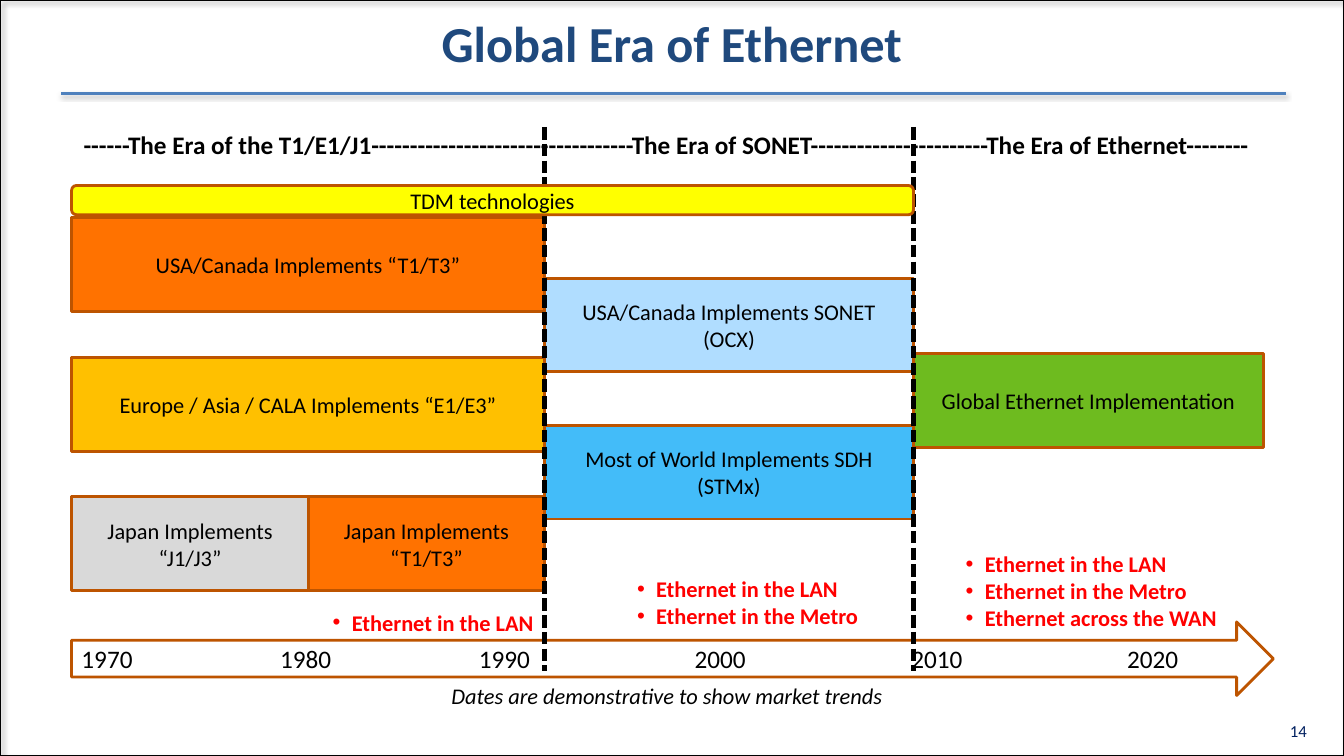
from lxml.etree import SubElement
from pptx import Presentation
from pptx.dml.color import RGBColor
from pptx.enum.dml import MSO_LINE
from pptx.enum.shapes import MSO_CONNECTOR, MSO_SHAPE as SHAPE
from pptx.enum.text import MSO_ANCHOR as ANCHOR, PP_ALIGN as ALIGN
from pptx.oxml.ns import qn
from pptx.util import Inches, Pt

WIDTH, HEIGHT = 13.33, 7.5
# Column edges: start, Japan split, SONET era, Ethernet era, end
COLS = [0.71, 3.06, 5.4, 9.06, 12.53]
BOX_H = 0.93
EDGE = "BD5400"
ERAS = ("------The Era of the T1/E1/J1----------------------------------"
        "The Era of SONET-----------------------The Era of Ethernet--------")
# Text, first column, last column, top, fill
BOXES = [
    ("USA/Canada Implements “T1/T3”", 0, 2, 2.16, "FF7200"),
    ("Europe / Asia / CALA Implements “E1/E3”", 0, 2, 3.55, "FFC000"),
    ("Japan Implements “J1/J3”", 0, 1, 4.93, "D9D9D9"),
    ("Japan Implements “T1/T3”", 1, 2, 4.93, "FF7200"),
    ("USA/Canada Implements SONET (OCX)", 2, 3, 2.76, "B0DDFF"),
    ("Most of World Implements SDH (STMx)", 2, 3, 4.22, "43BCF9"),
    ("Global Ethernet Implementation", 3, 4, 3.51, "6EBB1F"),
]
YEARS = range(1970, 2021, 10)
YEAR_TABS = [1.97, 3.94, 6.08, 8.23, 10.37]
REACH = ["Ethernet in the LAN", "Ethernet in the Metro", "Ethernet across the WAN"]


def rgb(value):
    return RGBColor.from_string(value)


def emu(inches):
    return str(Inches(inches))


def effects(parent, blur=0, dist=0, angle=0, alpha=0):
    """Add an effect list, holding a shadow when alpha is given."""
    lst = SubElement(parent, qn("a:effectLst"))
    if alpha:
        shadow = SubElement(lst, qn("a:outerShdw"), blurRad=str(Pt(blur)),
                            dist=str(Pt(dist)), dir=str(angle * 60000),
                            algn="tl", rotWithShape="0")
        color = SubElement(shadow, qn("a:srgbClr"), val="000000")
        SubElement(color, qn("a:alpha"), val=str(alpha * 1000))
    return lst


def write(sp, lines, size, color="000000", bold=False, italic=False,
          align=ALIGN.CENTER, anchor=ANCHOR.MIDDLE, bullet=False):
    tf = sp.text_frame
    tf.word_wrap = True
    tf.vertical_anchor = anchor
    tf.text = "\n".join(lines)
    for p in tf.paragraphs:
        p.alignment = align
        if bullet:
            pPr = p._p.get_or_add_pPr()
            pPr.set("marL", emu(0.19))
            pPr.set("indent", emu(-0.19))
            SubElement(pPr, qn("a:buFont"), typeface="Arial")
            SubElement(pPr, qn("a:buChar"), char="•")
        for r in p.runs:
            font = r.font
            font.name, font.size = "Calibri", Pt(size)
            font.bold, font.italic = bold, italic
            font.color.rgb = rgb(color)
    return tf


def add_text(slide, x, y, w, h, lines, size, **style):
    sp = slide.shapes.add_textbox(Inches(x), Inches(y), Inches(w), Inches(h))
    return write(sp, lines, size, **style)


def add_box(slide, x, y, w, h, fill, kind=SHAPE.RECTANGLE, line=EDGE, weight=2):
    sp = slide.shapes.add_shape(kind, Inches(x), Inches(y), Inches(w), Inches(h))
    sp.shadow.inherit = False
    if fill:
        sp.fill.solid()
        sp.fill.fore_color.rgb = rgb(fill)
    else:
        sp.fill.background()
    sp.line.color.rgb = rgb(line)
    sp.line.width = Pt(weight)
    return sp


def add_line(slide, x1, y1, x2, y2, color, weight, dash=None, **shadow):
    ln = slide.shapes.add_connector(MSO_CONNECTOR.STRAIGHT, Inches(x1), Inches(y1),
                                    Inches(x2), Inches(y2))
    ln.line.color.rgb = rgb(color)
    ln.line.width = Pt(weight)
    if dash:
        ln.line.dash_style = dash
    effects(ln._element.spPr, **shadow)


def add_frame(slide):
    # Border, page number, title and rule
    border = add_box(slide, 0, 0, WIDTH, HEIGHT, None, line="000000", weight=1.5)
    spPr = border._element.spPr
    spPr.remove(spPr.find(qn("a:effectLst")))
    effects(spPr, blur=4, dist=3, angle=45, alpha=40)
    add_text(slide, 12.46, 7.1, 0.6, 0.3, ["14"], 12, color="002060",
             align=ALIGN.RIGHT, anchor=ANCHOR.TOP)
    add_line(slide, 0.61, 0.93, 12.75, 0.93, "4F81BD", 2,
             blur=3.1, dist=1.6, angle=90, alpha=38)
    tf = add_text(slide, 0, 0, WIDTH, 0.84, ["Global Era of Ethernet"], 36,
                  color="1F497D", bold=True)
    rPr = tf.paragraphs[0].runs[0]._r.get_or_add_rPr()
    rPr.find(qn("a:latin")).addprevious(
        effects(rPr, blur=3, dist=3, angle=45, alpha=43))


def add_timeline(slide):
    # Year arrow, with the years on tab stops
    arrow = add_box(slide, COLS[0], 6.17, 11.92, 0.73, "FFFFFF", SHAPE.RIGHT_ARROW)
    tf = write(arrow, ["\t".join(str(y) for y in YEARS)], 18, align=ALIGN.LEFT)
    tabs = SubElement(tf.paragraphs[0]._p.get_or_add_pPr(), qn("a:tabLst"))
    for pos in YEAR_TABS:
        SubElement(tabs, qn("a:tab"), pos=emu(pos), algn="l")
    add_text(slide, 3.26, 6.72, 6.71, 0.37,
             ["Dates are demonstrative to show market trends"], 16,
             italic=True, anchor=ANCHOR.TOP)


def main():
    prs = Presentation()
    prs.slide_width, prs.slide_height = Inches(WIDTH), Inches(HEIGHT)
    slide = prs.slides.add_slide(prs.slide_layouts[6])
    add_frame(slide)

    # Era headings
    tf = add_text(slide, 0.61, 1.28, 12.12, 0.38, [ERAS], 18, bold=True,
                  align=ALIGN.LEFT, anchor=ANCHOR.TOP)
    tf.margin_top = 0
    tf.paragraphs[0]._p.get_or_add_pPr().set("marL", emu(0.12))

    # Regional technologies
    for text, first, last, top, fill in BOXES:
        sp = add_box(slide, COLS[first], top, COLS[last] - COLS[first], BOX_H, fill)
        write(sp, [text], 16)
    add_timeline(slide)

    # Era dividers and the band across both TDM eras
    for x in COLS[2:4]:
        add_line(slide, x, 1.26, x, 6.66, "000000", 3, MSO_LINE.SQUARE_DOT)
    band = add_box(slide, COLS[0], 1.84, COLS[3] - COLS[0], 0.29, "FFFF00",
                   SHAPE.ROUNDED_RECTANGLE)
    write(band, ["TDM technologies"], 16)

    # Reach of Ethernet in each era
    for count, x, top, align in [(1, 2.56, 5.99, ALIGN.RIGHT),
                                 (2, 6.22, 5.66, ALIGN.LEFT),
                                 (3, 9.48, 5.41, ALIGN.LEFT)]:
        add_text(slide, x, top, 2.83, 0.1 + 0.27 * count, REACH[:count], 16,
                 color="FF0000", bold=True, align=align, anchor=ANCHOR.TOP, bullet=True)
    prs.save("out.pptx")


if __name__ == "__main__":
    main()
